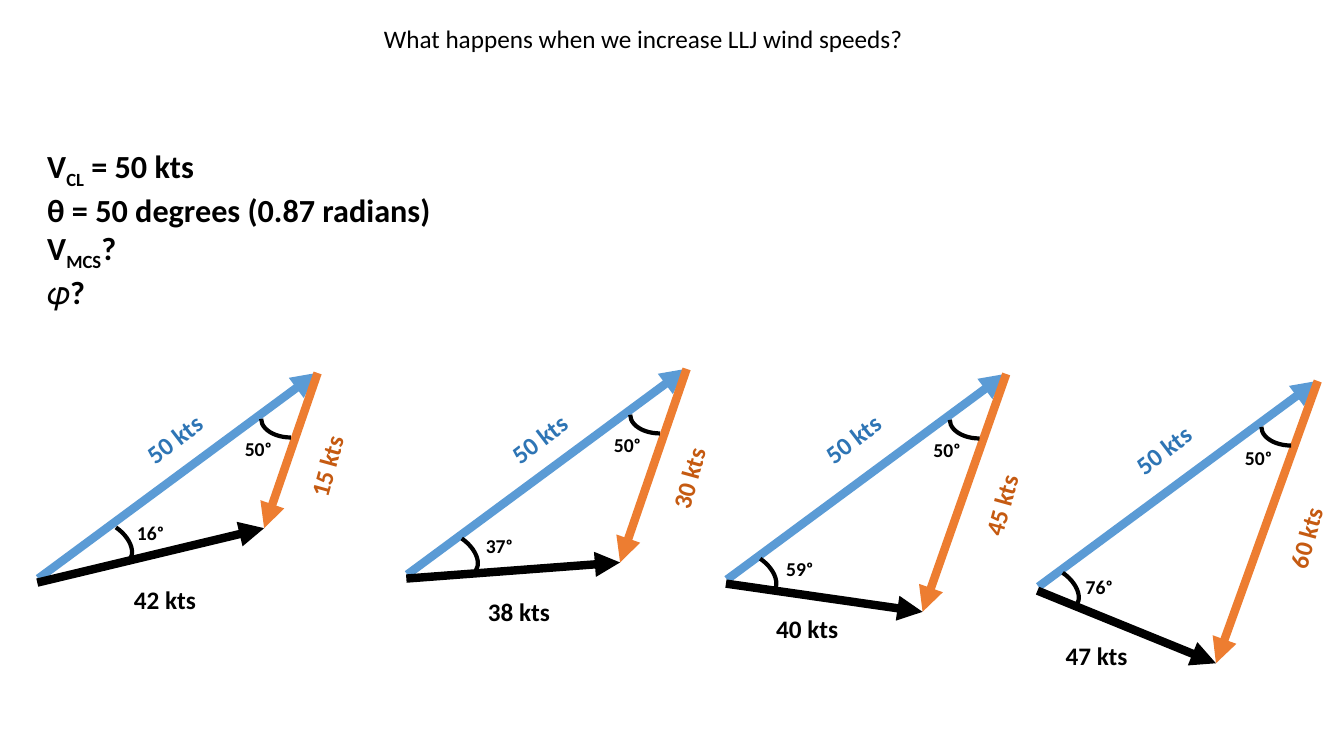
import pptx
import pptx.util
import pptx.dml.color
import pptx.enum.shapes
import pptx.enum.text
import pptx.oxml.ns
from lxml import etree

PX = 9144
FONT = "Calibri"
BLACK, BLUE, ORANGE = "000000", "5B9BD5", "ED7D31"
NAVY, RUST = "2E75B5", "C55A11"
CASES = [
    dict(start=(38, 574), tip=(224, -50), arc=(37, -54),
         cold=(94, -159), jet=("15 kts", 245, -132),
         storm=("42 kts", 85, 1), angle=("16ᵒ", 88, -62)),
    dict(start=(404, 570), tip=(211, -12), arc=(14, -39),
         cold=(90, -155), jet=("30 kts", 238, -116),
         storm=("38 kts", 70, 17), angle=("37ᵒ", 68, -45)),
    dict(start=(721, 575), tip=(194, 32), arc=(-7, -24),
         cold=(84, -160), jet=("45 kts", 231, -94),
         storm=("40 kts", 39, 29), angle=("59ᵒ", 49, -27)),
    dict(start=(1030, 582), tip=(176, 76), arc=(-16, -17),
         cold=(83, -156), jet=("60 kts", 224, -69),
         storm=("47 kts", 17, 48), angle=("76ᵒ", 37, -17)),
]
FACTS = [
    [("V", False), ("CL", True), (" = 50 kts", False)],
    [("θ = 50 degrees (0.87 radians)", False)],
    [("V", False), ("MCS", True), ("?", False)],
    [("𝜑?", False)],
]


def tint(code):
    """Turn a hex string into a colour."""
    return pptx.dml.color.RGBColor.from_string(code)


def scale(*nums):
    """Turn px lengths into EMU."""
    return [pptx.util.Emu(num * PX) for num in nums]


def style(item, form):
    """Set each attribute named in the format dict."""
    for name, value in form.items():
        setattr(item, name, value)


def write(slide, box, lines, size, color=BLACK, bold=True, wrap=False, turn=0):
    """Place a text box whose lines are lists of (text, lowered) runs."""
    shape = slide.shapes.add_textbox(*scale(*box))
    shape.rotation = turn
    frame = shape.text_frame
    style(frame, dict(word_wrap=wrap,
                      auto_size=pptx.enum.text.MSO_AUTO_SIZE.SHAPE_TO_FIT_TEXT))
    for num, line in enumerate(lines):
        para = frame.add_paragraph() if num else frame.paragraphs[0]
        for text, low in line:
            run = para.add_run()
            run.text = text
            style(run.font, dict(name=FONT, size=pptx.util.Pt(size), bold=bold))
            run.font.color.rgb = tint(color)
            if low:
                run.font._element.set("baseline", "-25000")


def arrow(slide, start, end, color):
    """Draw a thick arrow from start to end."""
    line = slide.shapes.add_connector(
        pptx.enum.shapes.MSO_CONNECTOR.STRAIGHT, *scale(*start, *end))
    line.line.color.rgb = tint(color)
    line.line.width = pptx.util.Pt(6)
    mark = pptx.oxml.ns.qn
    etree.SubElement(line.line._get_or_add_ln(), mark("a:tailEnd"), type="triangle")
    etree.SubElement(line._element.spPr, mark("a:effectLst"))


def arc(slide, left, top, turn):
    """Draw the quarter arc that marks an angle."""
    shape = slide.shapes.add_shape(
        pptx.enum.shapes.MSO_SHAPE.ARC, *scale(left, top, 59, 37))
    shape.adjustments[0] = 162
    shape.adjustments[1] = 0
    shape.rotation = turn
    shape.shadow.inherit = False
    shape.fill.background()
    shape.line.color.rgb = tint(BLACK)
    shape.line.width = pptx.util.Pt(3)


def winds(slide, case):
    """Draw one wind triangle with its labels around its start point."""
    def spot(dx, dy):
        """Shift a point from the start of the triangle."""
        return case["start"][0] + dx, case["start"][1] + dy

    tip = spot(*case["tip"])
    arrow(slide, spot(0, 0), spot(276, -204), BLUE)
    arrow(slide, spot(277, -204), tip, ORANGE)
    arrow(slide, spot(-1, 4), tip, BLACK)
    arc(slide, *spot(221, -177), 180)
    arc(slide, *spot(*case["arc"]), 34.5)
    speeds = [(("50 kts", *case["cold"]), NAVY, 322.6),
              (case["jet"], RUST, 285.4), (case["storm"], BLACK, 0)]
    for (text, dx, dy), color, turn in speeds:
        write(slide, (*spot(dx, dy), 82, 40), [[(text, False)]], 18, color, turn=turn)
    for text, dx, dy in [("50ᵒ", 195, -145), case["angle"]]:
        write(slide, (*spot(dx, dy), 47, 34), [[(text, False)]], 14)


def main():
    """Build the slide and save it."""
    deck = pptx.Presentation()
    deck.slide_width, deck.slide_height = scale(1333, 750)
    slide = deck.slides.add_slide(deck.slide_layouts[6])
    title = "What happens when we increase LLJ wind speeds?"
    write(slide, (371, 18, 541, 40), [[(title, False)]], 18, bold=False, wrap=True)
    write(slide, (37, 140, 644, 165), FACTS, 23, wrap=True)
    for case in CASES:
        winds(slide, case)
    deck.save("out.pptx")


if __name__ == "__main__":
    main()
